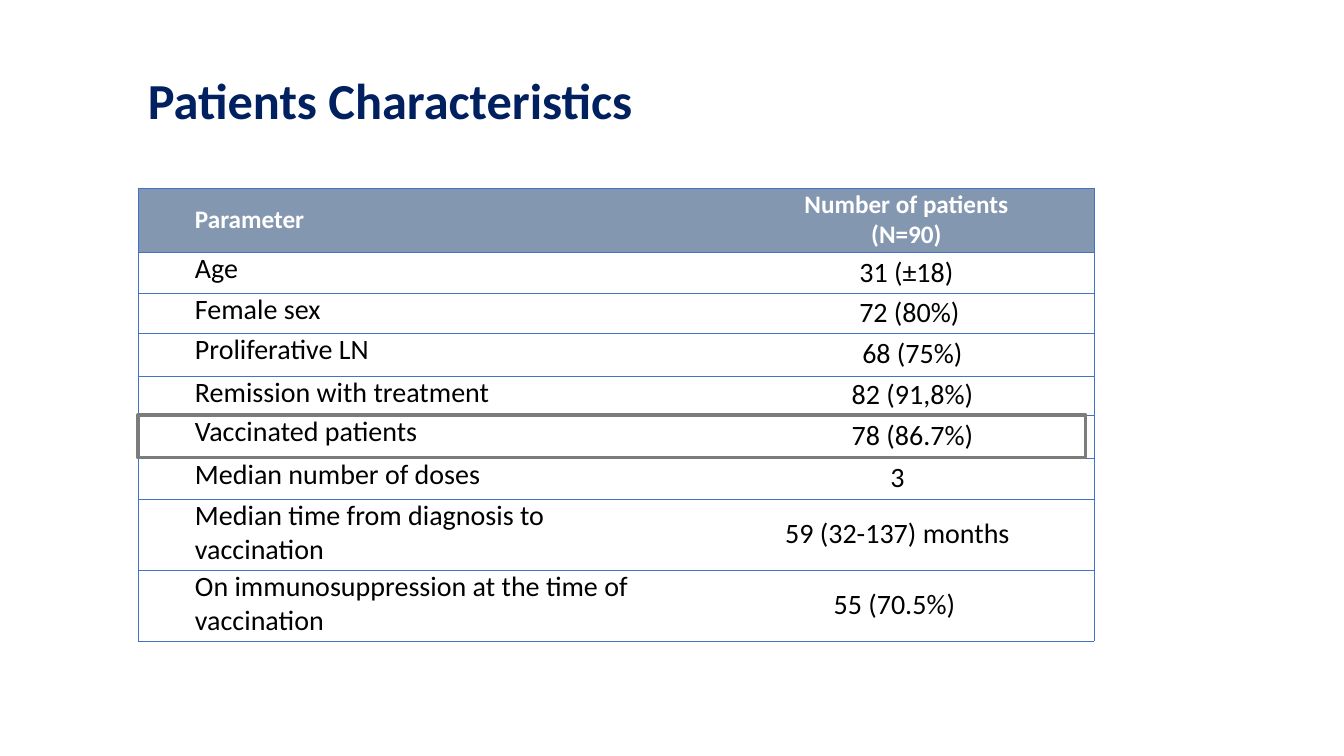
from dataclasses import dataclass

from lxml import etree
from pptx import Presentation
from pptx import util as u
from pptx.dml.color import RGBColor
from pptx.enum import shapes, text
from pptx.oxml.ns import qn

EMU_PER_PX = 914400 / 100.8
FONT = "Calibri"
COLORS = {
    "title": "002060",
    "header": "8497B0",
    "header_text": "FFFFFF",
    "body": "FFFFFF",
    "body_text": "000000",
    "border": "4472C4",
    "highlight": "7C7C7C",
}
TABLE_LEFT, TABLE_TOP = 138, 188
COLUMN_WIDTHS = (531, 407, 10)
CELL_MARGIN = 7
INDENT = 50


@dataclass(frozen=True)
class Row:
    height: int
    parameter: str
    value: str
    merged: bool = False
    extra_indent: int = 0


ROWS = (
    Row(64, "Parameter", "Number of patients\n(N=90)", merged=True),
    Row(41, "Age", "31 (±18)", merged=True),
    Row(40, "Female sex", "72 (80%)", merged=True, extra_indent=6),
    Row(43, "Proliferative LN", "68 (75%)", extra_indent=30),
    Row(39, "Remission with treatment", "82 (91,8%)", extra_indent=30),
    Row(43, "Vaccinated patients", "78 (86.7%)", extra_indent=30),
    Row(41, "Median number of doses", "3"),
    Row(71, "Median time from diagnosis to vaccination", "59 (32-137) months"),
    Row(71, "On immunosuppression at the time of vaccination", "55 (70.5%)",
        extra_indent=-6),
)
HIGHLIGHTED_ROW = 5


def px(length: int) -> u.Emu:
    return u.Emu(round(length * EMU_PER_PX))


def color(name: str) -> RGBColor:
    return RGBColor.from_string(COLORS[name])


def style_font(para, size: int, color_name: str, bold: bool) -> None:
    para.font.name = FONT
    para.font.size = u.Pt(size)
    para.font.bold = bold
    para.font.color.rgb = color(color_name)


def add_title(page, wording: str) -> None:
    box = page.shapes.add_textbox(px(138), px(55), px(918), px(96))
    frame = box.text_frame
    frame.word_wrap = True
    frame.vertical_anchor = text.MSO_ANCHOR.MIDDLE
    para = frame.paragraphs[0]
    para.text = wording
    para.line_spacing = 0.9
    style_font(para, 36, "title", True)


def set_borders(cell, left: bool, right: bool) -> None:
    """Rule the cell above and below, and at the chosen sides."""
    properties = cell._tc.get_or_add_tcPr()
    for side, shown in (("L", left), ("R", right), ("T", True), ("B", True)):
        line = etree.SubElement(properties, qn(f"a:ln{side}"), w=str(u.Pt(0.5)))
        if shown:
            fill = etree.SubElement(line, qn("a:solidFill"))
            etree.SubElement(fill, qn("a:srgbClr"), val=COLORS["border"])
        else:
            etree.SubElement(line, qn("a:noFill"))


def fill_cell(cell, wording: str, is_header: bool, centered: bool, indent: int) -> None:
    cell.fill.solid()
    cell.fill.fore_color.rgb = color("header" if is_header else "body")
    cell.margin_left = cell.margin_right = px(CELL_MARGIN)
    cell.margin_top = cell.margin_bottom = 0
    if is_header or centered:
        cell.vertical_anchor = text.MSO_ANCHOR.MIDDLE
    cell.text = wording
    for para in cell.text_frame.paragraphs:
        para.alignment = text.PP_ALIGN.CENTER if centered else text.PP_ALIGN.LEFT
        para._p.get_or_add_pPr().set("marL", str(px(indent)))
        style_font(para, 18 if is_header else 20,
                   "header_text" if is_header else "body_text", is_header)


def add_patient_table(page) -> None:
    frame = page.shapes.add_table(
        len(ROWS), len(COLUMN_WIDTHS), px(TABLE_LEFT), px(TABLE_TOP),
        px(sum(COLUMN_WIDTHS)), px(sum(row.height for row in ROWS)))
    table = frame.table
    table.horz_banding = False
    for column, width in zip(table.columns, COLUMN_WIDTHS):
        column.width = px(width)
    last = len(COLUMN_WIDTHS) - 1
    for index, row in enumerate(ROWS):
        table.rows[index].height = px(row.height)
        if row.merged:
            table.cell(index, 1).merge(table.cell(index, last))
        for position, wording in enumerate((row.parameter, row.value, "")):
            cell = table.cell(index, position)
            set_borders(cell, left=position == 0,
                        right=position == last or (row.merged and position == 1))
            fill_cell(cell, wording, is_header=index == 0, centered=position == 1,
                      indent=INDENT + row.extra_indent if position == 1
                      else INDENT if position == 0 else 0)


def add_row_highlight(page) -> None:
    top = TABLE_TOP + sum(row.height for row in ROWS[:HIGHLIGHTED_ROW])
    frame = page.shapes.add_shape(
        shapes.MSO_SHAPE.RECTANGLE, px(TABLE_LEFT), px(top),
        px(sum(COLUMN_WIDTHS)), px(ROWS[HIGHLIGHTED_ROW].height))
    frame.shadow.inherit = False
    frame.fill.background()
    frame.line.color.rgb = color("highlight")
    frame.line.width = u.Pt(2.25)


def main() -> None:
    deck = Presentation()
    deck.slide_width, deck.slide_height = px(1344), px(756)
    page = deck.slides.add_slide(deck.slide_layouts[6])

    # Heading
    add_title(page, "Patients Characteristics")

    # Table with the vaccinated row framed
    add_patient_table(page)
    add_row_highlight(page)

    deck.save("out.pptx")


if __name__ == "__main__":
    main()
